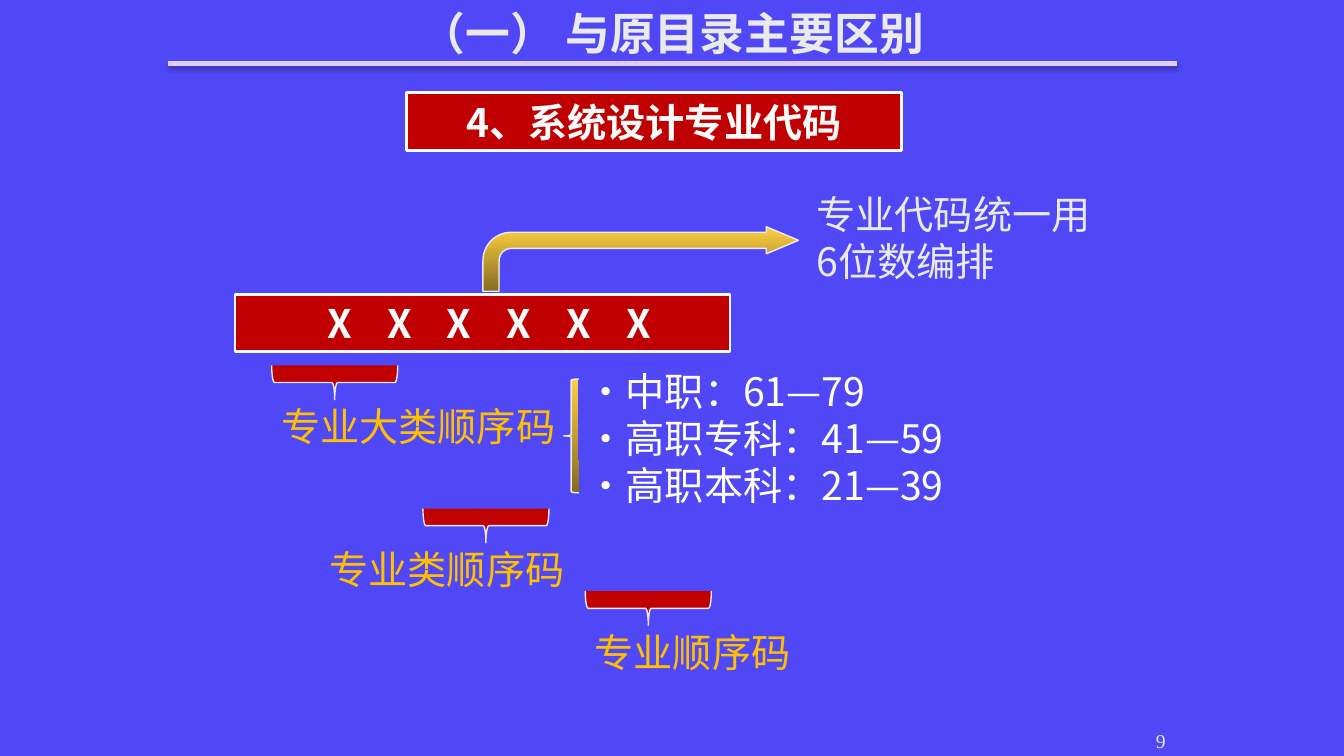
import pptx
import pptx.dml.color
import pptx.enum.shapes
import pptx.enum.text
import pptx.oxml
import pptx.oxml.ns
import pptx.util

Inches, Pt = pptx.util.Inches, pptx.util.Pt
SHAPE = pptx.enum.shapes.MSO_SHAPE
ALIGN = pptx.enum.text.PP_ALIGN
ANCHOR = pptx.enum.text.MSO_ANCHOR
qn = pptx.oxml.ns.qn

SANS, SERIF = "Noto Sans CJK SC", "Times New Roman"
COLORS = {
    "background": "5048F6", "rule": "E0CCFF", "red": "C00000",
    "pale": "EAEAEA", "bright": "F9FBFA", "white": "FFFFFF",
    "amber": "FFC000", "gold": "FECF40", "bronze": "846C21",
}
A_NS = 'xmlns:a="http://schemas.openxmlformats.org/drawingml/2006/main"'
RULE_SHADOW = (
    f'<a:effectLst {A_NS}><a:outerShdw blurRad="{Pt(3.1)}" dist="{Pt(1.8)}" '
    'dir="5400000" rotWithShape="0"><a:srgbClr val="000000">'
    '<a:alpha val="35000"/></a:srgbClr></a:outerShdw></a:effectLst>'
)


def rgb(name):
    return pptx.dml.color.RGBColor.from_string(COLORS[name])


def write(tf, lines, color, size=28, bold=False, align=ALIGN.LEFT,
          font=SANS, tracking=0):
    """Fill a text frame, one paragraph a line; tracking is in points."""
    tf.word_wrap = True
    for i, line in enumerate(lines):
        p = tf.add_paragraph() if i else tf.paragraphs[0]
        p.text = line
        p.alignment = align
        p.font.size = Pt(size)
        p.font.bold = bold
        p.font.name = font
        p.font.color.rgb = rgb(color)
        props = p._p.pPr.find(qn("a:defRPr"))
        props.append(pptx.oxml.parse_xml(f'<a:ea {A_NS} typeface="{font}"/>'))
        if tracking:
            props.set("spc", str(round(tracking * 100)))


def add_text(s, box, lines, color, anchor=ANCHOR.TOP, **style):
    tf = s.shapes.add_textbox(*map(Inches, box)).text_frame
    write(tf, lines, color, **style)
    tf.vertical_anchor = anchor
    return tf


def add_figure(s, kind, box, fill="red", line="pale", width=1):
    """Add a preset shape; a pair of fill colours makes a downward gradient."""
    sp = s.shapes.add_shape(kind, *map(Inches, box))
    sp.shadow.inherit = False
    if isinstance(fill, tuple):
        sp.fill.gradient()
        sp.fill.gradient_angle = 270
        for stop, name in zip(sp.fill.gradient_stops, fill):
            stop.color.rgb = rgb(name)
    else:
        sp.fill.solid()
        sp.fill.fore_color.rgb = rgb(fill)
    sp.line.color.rgb = rgb(line)
    sp.line.width = Pt(width)
    return sp


def add_banner(s, left, top, text, **style):
    sp = add_figure(s, SHAPE.RECTANGLE, (left, top, 4.91, 0.57),
                    line="bright", width=2)
    write(sp.text_frame, [text], "bright", bold=True, align=ALIGN.CENTER,
          **style)
    return sp


def add_code_part(s, brace_left, brace_top, label_left, label_width, label):
    """Add a brace that points down at the name of a pair of digits."""
    sp = add_figure(s, SHAPE.LEFT_BRACE, (brace_left, brace_top, 0.34, 1.25))
    sp.rotation = 270
    add_text(s, (label_left, brace_top + 0.77, label_width, 0.62), [label],
             "amber")


def add_title_rule(s):
    line = s.shapes.add_connector(
        pptx.enum.shapes.MSO_CONNECTOR.STRAIGHT,
        Inches(1.67), Inches(0.63), Inches(11.67), Inches(0.63))
    line.line.color.rgb = rgb("rule")
    line.line.width = Pt(3)
    line._element.spPr.append(pptx.oxml.parse_xml(RULE_SHADOW))


def main():
    prs = pptx.Presentation()
    prs.slide_width, prs.slide_height = Inches(13.33), Inches(7.5)
    s = prs.slides.add_slide(prs.slide_layouts[6])
    s.background.fill.solid()
    s.background.fill.fore_color.rgb = rgb("background")

    add_text(s, (1.67, -0.18, 10, 1), ["（一） 与原目录主要区别"], "pale",
             anchor=ANCHOR.MIDDLE, size=32, bold=True, align=ALIGN.CENTER)
    add_title_rule(s)
    tf = add_text(s, (9.58, 7.06, 2.08, 0.5), ["9"], "pale",
                  anchor=ANCHOR.BOTTOM, size=14, align=ALIGN.RIGHT, font=SERIF)
    tf.margin_bottom = Inches(0.09)

    add_banner(s, 4.03, 0.92, "4、系统设计专业代码")
    digits = add_banner(s, 2.33, 2.92, "X X X X X X", tracking=9.4)
    digits.text_frame.margin_left = Inches(0.23)  # balances trailing tracking

    for part in (
        (3.15, 3.17, 2.69, 4.12, "专业大类顺序码"),
        (4.65, 4.59, 3.17, 2.57, "专业类顺序码"),
        (6.26, 5.41, 5.8, 2.92, "专业顺序码"),
    ):
        add_code_part(s, *part)

    metal = ("gold", "bronze")
    add_text(s, (5.72, 3.59, 4.12, 1.89),
             ["·中职：61—79", "·高职专科：41—59", "·高职本科：21—39"], "white")
    add_figure(s, SHAPE.LEFT_BRACE, (5.59, 3.76, 0.15, 1.13), metal)

    add_text(s, (8, 1.84, 3.25, 1.04), ["专业代码统一用", "6位数编排"], "pale")
    arrow = add_figure(s, SHAPE.BENT_ARROW, (4.79, 2.25, 3.13, 0.64), metal)
    for i, value in enumerate((0.25, 0.21, 0.5, 0.44)):
        arrow.adjustments[i] = value

    prs.save("out.pptx")


if __name__ == "__main__":
    main()
